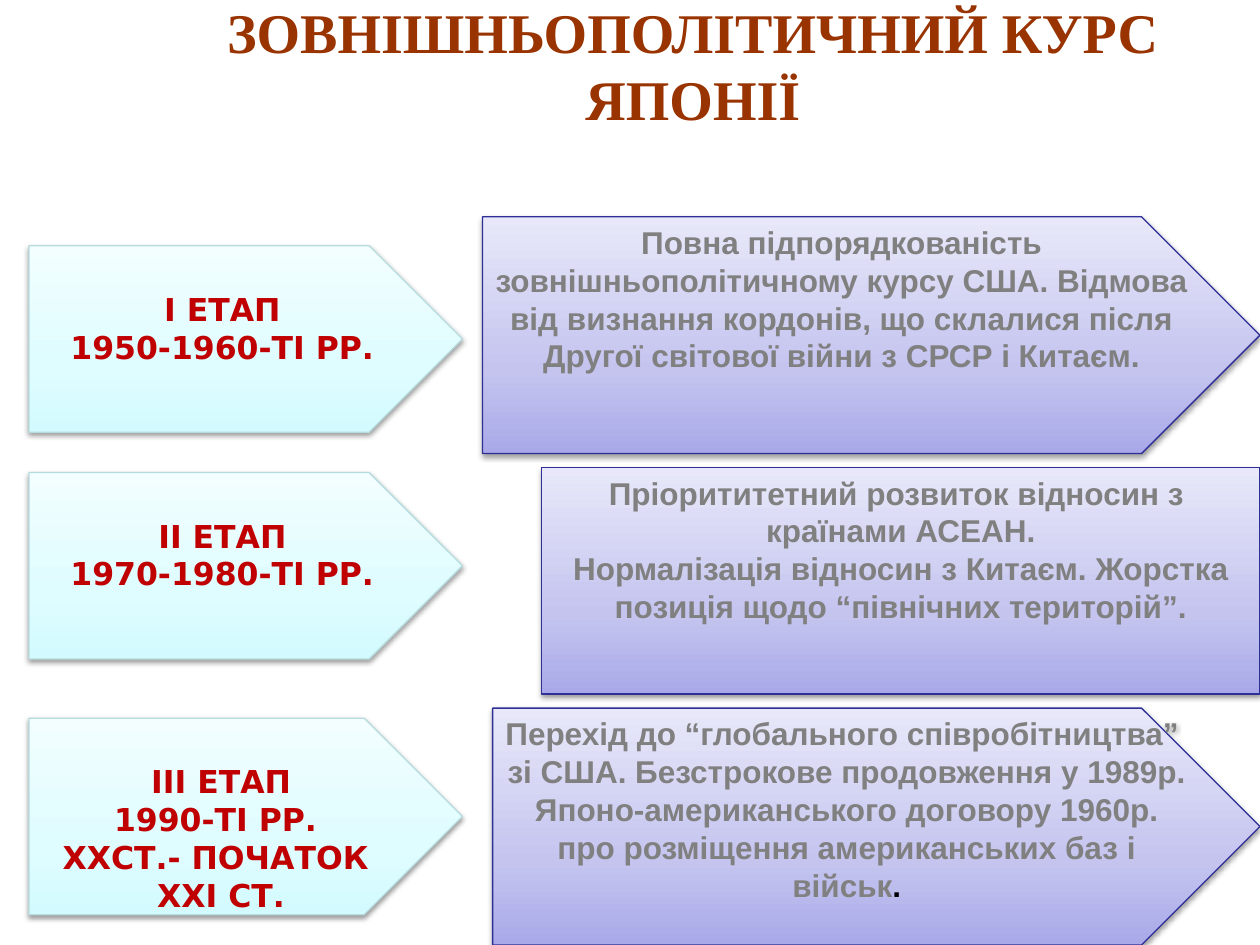
from copy import deepcopy

from lxml import etree
from pptx import Presentation
from pptx import util as u
from pptx.dml.color import RGBColor
from pptx.enum import shapes, text
from pptx.oxml import ns

WIDTH, HEIGHT = 10, 7.5
STAGE_LEFT, STAGE_WIDTH = 0.23, 3.44
PENTAGON = shapes.MSO_SHAPE.PENTAGON
RECTANGLE = shapes.MSO_SHAPE.RECTANGLE

TITLE_FONT = {"name": "Times New Roman", "size": u.Pt(32), "bold": True}
STAGE_FONT = {"name": "DejaVu Sans", "size": u.Pt(18), "bold": True}
PANEL_FONT = {"name": "Arial", "size": u.Pt(18), "bold": True}

STAGE_STYLE = {"stops": ["D3FBFF", "DFFCFF", "F2FEFF"], "line": "B6DCDF",
               "font": STAGE_FONT, "color": "C00000", "inset": 0.35}
PANEL_STYLE = {"stops": ["A9A9E9", "C4C4EF", "E8E8FA"], "line": "2F2F98",
               "font": PANEL_FONT, "color": "808080", "inset": 0.05}

STAGES = [
    (1.95, 1.48, ["І ЕТАП", "1950-1960-ТІ РР."]),
    (3.75, 1.48, ["ІІ ЕТАП", "1970-1980-ТІ РР."]),
    (5.7, 1.56, ["ІІІ ЕТАП", "1990-ТІ РР. ", "XXСТ.- ПОЧАТОК ", "XXІ СТ."]),
]
PANELS = [
    (PENTAGON, 3.83, 1.72, 1.88, [
        "Повна підпорядкованість зовнішньополітичному курсу США. Відмова "
        "від визнання кордонів, що склалися після Другої світової війни "
        "з СРСР і Китаєм."]),
    (RECTANGLE, 4.3, 3.71, 1.8, [
        "Пріорититетний розвиток відносин з \vкраїнами АСЕАН.\v"
        "Нормалізація відносин з Китаєм. Жорстка позиція щодо "
        "“північних територій”."]),
    (PENTAGON, 3.91, 5.62, 1.88, [
        "Перехід до “глобального співробітництва” ",
        "зі США. Безстрокове продовження у 1989р.",
        "Японо-американського договору 1960р.",
        "про розміщення американських баз і військ"]),
]


def set_color(target, value):
    target.rgb = RGBColor.from_string(value)


def set_font(font, values, color):
    for name, value in values.items():
        setattr(font, name, value)
    set_color(font.color, color)


def set_frame(frame, anchor, **margins):
    frame.word_wrap = True
    frame.vertical_anchor = anchor
    for side, value in margins.items():
        setattr(frame, f"margin_{side}", u.Inches(value))


def write_lines(frame, lines, font, color):
    for index, line in enumerate(lines):
        paragraph = frame.add_paragraph() if index else frame.paragraphs[0]
        paragraph.text = line
        paragraph.alignment = text.PP_ALIGN.CENTER
        for run in paragraph.runs:
            set_font(run.font, font, color)


def fill_gradient(shape, colors):
    shape.fill.gradient()
    shape.fill.gradient_angle = 90
    first = shape._element.spPr.find(".//" + ns.qn("a:gs"))
    first.addnext(deepcopy(first))
    for stop, color, position in zip(shape.fill.gradient_stops, colors, (0, 0.35, 1)):
        set_color(stop.color, color)
        stop.position = position


def add_shadow(shape):
    shape.shadow.inherit = False
    effects = shape._element.spPr.find(ns.qn("a:effectLst"))
    outer = etree.SubElement(effects, ns.qn("a:outerShdw"), blurRad=str(u.Pt(3.1)),
                             dist=str(u.Pt(1.6)), dir="5400000", rotWithShape="0")
    color = etree.SubElement(outer, ns.qn("a:srgbClr"), val="000000")
    etree.SubElement(color, ns.qn("a:alpha"), val="38000")


def add_block(slide, kind, box, lines, style):
    shape = slide.shapes.add_shape(kind, *map(u.Inches, box))
    fill_gradient(shape, style["stops"])
    set_color(shape.line.color, style["line"])
    shape.line.width = u.Pt(0.75)
    add_shadow(shape)
    set_frame(shape.text_frame, text.MSO_ANCHOR.TOP,
              left=0.08, right=0.08, top=style["inset"], bottom=0.05)
    write_lines(shape.text_frame, lines, style["font"], style["color"])
    return shape


def add_title(slide, title):
    box = slide.shapes.add_textbox(*map(u.Inches, (1, 0, WIDTH - 1, 1.02)))
    set_frame(box.text_frame, text.MSO_ANCHOR.MIDDLE)
    write_lines(box.text_frame, [title], TITLE_FONT, "993300")


def main():
    presentation = Presentation()
    presentation.slide_width = u.Inches(WIDTH)
    presentation.slide_height = u.Inches(HEIGHT)
    slide = presentation.slides.add_slide(presentation.slide_layouts[6])
    add_title(slide, "ЗОВНІШНЬОПОЛІТИЧНИЙ КУРС ЯПОНІЇ")
    for top, height, lines in STAGES:
        add_block(slide, PENTAGON, (STAGE_LEFT, top, STAGE_WIDTH, height), lines, STAGE_STYLE)
    for kind, left, top, height, lines in PANELS:
        panel = add_block(slide, kind, (left, top, WIDTH - left, height), lines, PANEL_STYLE)
    full_stop = panel.text_frame.paragraphs[-1].add_run()
    full_stop.text = "."
    set_font(full_stop.font, PANEL_FONT, "000000")
    presentation.save("out.pptx")


if __name__ == "__main__":
    main()
